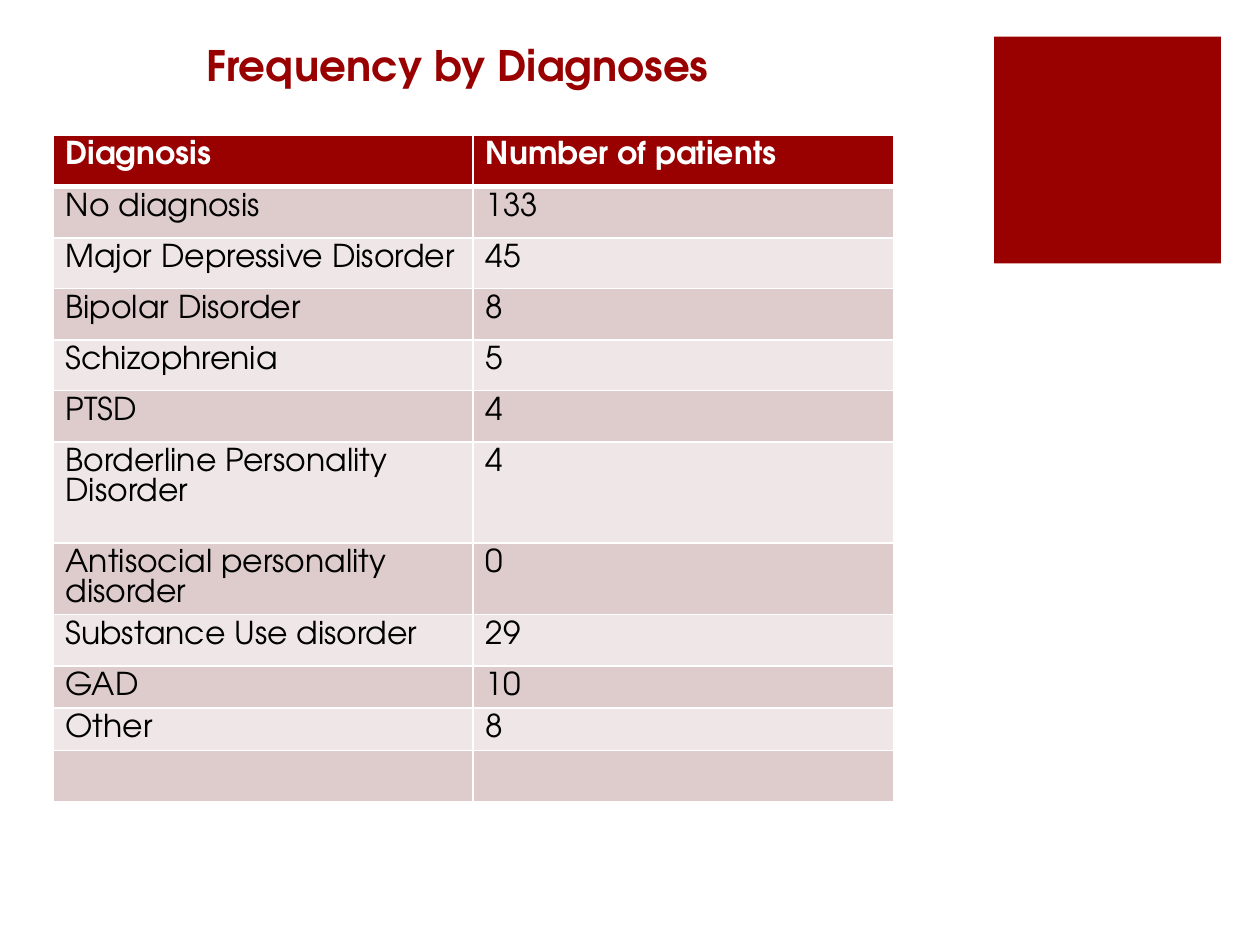
from lxml.etree import SubElement
from pptx import Presentation
from pptx.dml.color import RGBColor
from pptx.enum.shapes import MSO_SHAPE
from pptx.enum.text import MSO_ANCHOR, MSO_AUTO_SIZE, PP_ALIGN
from pptx.oxml.ns import qn
from pptx.util import Inches, Pt

THEME = {
    "font": "TeX Gyre Adventor",
    "accent": "990000",
    "bands": ("EFE7E7", "DECCCC"),
    "text": "000000",
    "white": "FFFFFF",
    "title_size": 24,
    "table_size": 18,
    "table_line": 16.8,
}


def style_runs(p, size, color, bold):
    for r in p.runs:
        r.font.name = THEME["font"]
        r.font.size = Pt(size)
        r.font.bold = bold
        r.font.color.rgb = RGBColor.from_string(color)


def add_borders(cell, top, bottom):
    tc_pr = cell._tc.get_or_add_tcPr()
    widths = {"lnL": 1, "lnR": 1, "lnT": top, "lnB": bottom}
    for i, (tag, width) in enumerate(widths.items()):
        ln = SubElement(tc_pr, qn(f"a:{tag}"), w=str(Pt(width)))
        fill = SubElement(ln, qn("a:solidFill"))
        SubElement(fill, qn("a:srgbClr"), val=THEME["white"])
        tc_pr.insert(i, ln)


prs = Presentation()
prs.slide_width, prs.slide_height = Inches(10), Inches(7.5)
s = prs.slides.add_slide(prs.slide_layouts[5])

square = s.shapes.add_shape(
    MSO_SHAPE.RECTANGLE, Inches(7.89), Inches(0.29), Inches(1.8), Inches(1.8))
square.shadow.inherit = False
square.fill.solid()
square.fill.fore_color.rgb = RGBColor.from_string(THEME["accent"])
square.line.fill.background()

title = s.shapes.title
title.left, title.top = Inches(0.94), Inches(0.26)
title.width, title.height = Inches(5.83), Inches(0.5)
tf = title.text_frame
tf.text = "Frequency by Diagnoses"
tf.word_wrap = True
tf.auto_size = MSO_AUTO_SIZE.NONE
tf.vertical_anchor = MSO_ANCHOR.TOP
tf.margin_left = Inches(0.7)
p = tf.paragraphs[0]
p.alignment = PP_ALIGN.LEFT
style_runs(p, THEME["title_size"], THEME["accent"], True)

rows = [
    ("Diagnosis", "Number of patients", 0.41),
    ("No diagnosis", "133", 0.41),
    ("Major Depressive Disorder", "45", 0.4),
    ("Bipolar Disorder", "8", 0.41),
    ("Schizophrenia", "5", 0.4),
    ("PTSD", "4", 0.41),
    ("Borderline Personality Disorder", "4", 0.8),
    ("Antisocial personality disorder", "0", 0.56),
    ("Substance Use disorder", "29", 0.41),
    ("GAD", "10", 0.33),
    ("Other", "8", 0.33),
    ("", "", 0.33),
]
table = s.shapes.add_table(
    len(rows), 2, Inches(0.42), Inches(1.07), Inches(6.67),
    Inches(sum(row[-1] for row in rows))).table

for i, (*texts, height) in enumerate(rows):
    header = i == 0
    table.rows[i].height = Inches(height)
    for j, text in enumerate(texts):
        cell = table.cell(i, j)
        cell.text = text
        cell.fill.solid()
        cell.fill.fore_color.rgb = RGBColor.from_string(
            THEME["accent"] if header else THEME["bands"][i % 2])
        add_borders(cell, 3 if i == 1 else 1, 3 if header else 1)
        p = cell.text_frame.paragraphs[0]
        p.line_spacing = Pt(THEME["table_line"])
        style_runs(p, THEME["table_size"],
                   THEME["white"] if header else THEME["text"], header)

prs.save("out.pptx")
